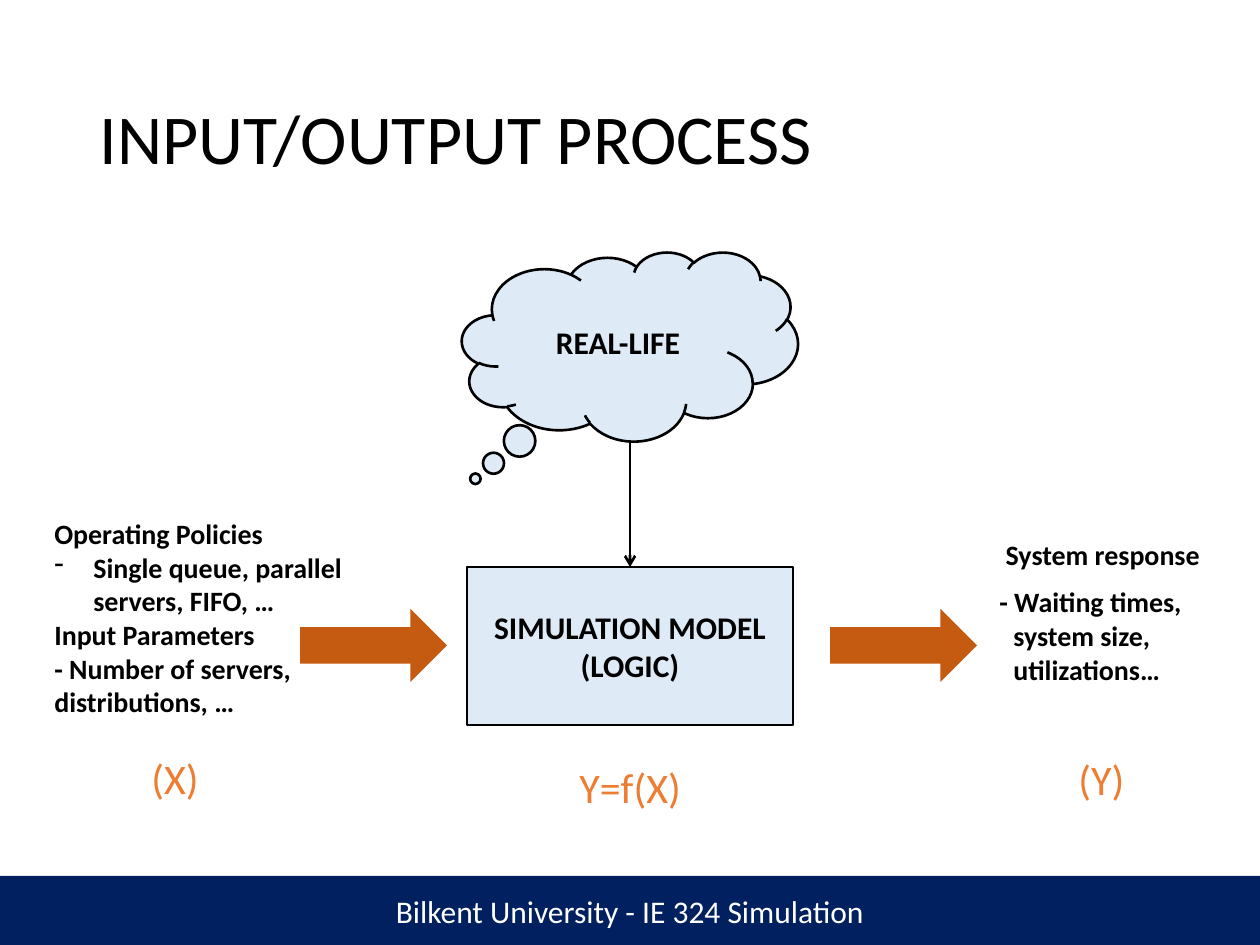
from lxml.etree import SubElement
from pptx import Presentation
from pptx.dml.color import RGBColor
from pptx.enum.shapes import MSO_CONNECTOR, MSO_SHAPE
from pptx.enum.text import MSO_ANCHOR, MSO_AUTO_SIZE, PP_ALIGN
from pptx.oxml.ns import qn
from pptx.util import Pt

SCALE = 914400 / 126
COLORS = {
    "navy": "002060",
    "pale": "DEEBF7",
    "rust": "C55A11",
    "orange": "ED7D31",
    "black": "000000",
    "white": "FFFFFF",
}


def emu(*sizes):
    return [round(size * SCALE) for size in sizes]


def color(name):
    return RGBColor.from_string(COLORS[name])


class Deck:
    """Holds the font, the line width and the current slide."""

    def __init__(self):
        self.font = "Calibri"
        self.line = Pt(1.5)
        self.prs = Presentation()
        self.prs.slide_width, self.prs.slide_height = emu(1260, 945)
        self.slide = self.prs.slides.add_slide(self.prs.slide_layouts[5])

    def letter(self, shape, text, size, ink="black", bold=False,
               align=PP_ALIGN.LEFT, wrap=True):
        frame = shape.text_frame
        frame.text = text
        frame.word_wrap = wrap
        frame.auto_size = MSO_AUTO_SIZE.NONE
        frame.vertical_anchor = MSO_ANCHOR.MIDDLE
        for para in frame.paragraphs:
            para.alignment = align
            for run in para.runs:
                run.font.name = self.font
                run.font.size = Pt(size)
                run.font.bold = bold
                run.font.color.rgb = color(ink)
        return frame.paragraphs

    def title(self, box, text):
        shape = self.slide.shapes.title
        shape.left, shape.top, shape.width, shape.height = emu(*box)
        self.letter(shape, text, 40)[0].line_spacing = 0.9

    def text(self, box, text, size, **style):
        shape = self.slide.shapes.add_textbox(*emu(*box))
        return self.letter(shape, text, size, **style)

    def shape(self, kind, box, fill, edge=None):
        shape = self.slide.shapes.add_shape(kind, *emu(*box))
        shape.shadow.inherit = False
        shape.fill.solid()
        shape.fill.fore_color.rgb = color(fill)
        if edge:
            shape.line.color.rgb = color(edge)
            shape.line.width = self.line
        else:
            shape.line.fill.background()
        return shape

    def label(self, kind, box, fill, text, ink="black", edge=None, bold=False):
        shape = self.shape(kind, box, fill, edge)
        self.letter(shape, text, 18, ink, bold, PP_ALIGN.CENTER, wrap=False)
        return shape

    def arrow(self, start, end):
        link = self.slide.shapes.add_connector(
            MSO_CONNECTOR.STRAIGHT, *emu(*start, *end))
        link.line.color.rgb = color("black")
        link.line.width = self.line
        props = link._element.spPr
        SubElement(props.find(qn("a:ln")), qn("a:tailEnd"), type="arrow")
        SubElement(props, qn("a:effectLst"))

    def indent(self, para, size, mark=None):
        props = para._p.get_or_add_pPr()
        left = emu(size)[0]
        props.set("marL", str(left))
        props.set("indent", str(-left))
        if mark:
            SubElement(props, qn("a:buChar"), char=mark)


def main():
    deck = Deck()
    deck.label(MSO_SHAPE.RECTANGLE, (0, 876, 1260, 69), "navy",
               "Bilkent University - IE 324 Simulation", "white")
    deck.title((87, 50, 1086, 183), "INPUT/OUTPUT PROCESS")

    deck.label(MSO_SHAPE.RECTANGLE, (467, 567, 326, 158), "pale",
               "SIMULATION MODEL\n(LOGIC)", edge="black", bold=True)
    cloud = deck.label(MSO_SHAPE.CLOUD_CALLOUT, (462, 252, 336, 189), "pale",
                       "REAL-LIFE", edge="black", bold=True)
    cloud.adjustments[0], cloud.adjustments[1] = -0.46, 0.7
    deck.arrow((630, 442), (630, 567))
    for left in (300, 830):
        deck.shape(MSO_SHAPE.RIGHT_ARROW, (left, 609, 147, 73), "rust")

    inputs = deck.text(
        (42, 509, 325, 217),
        "Operating Policies\n"
        "Single queue, parallel servers, FIFO, …\n"
        "Input Parameters\n"
        "- Number of servers, distributions, …", 16, bold=True)
    deck.indent(inputs[1], 39, "-")

    outputs = deck.text(
        (987, 529, 230, 165),
        " System response\n"
        "- Waiting times, system size, utilizations…", 16, bold=True)
    for para in outputs:
        deck.indent(para, 14)
    outputs[1].space_before = Pt(8)

    for text, box in (("(X)", (139, 746, 73, 63)),
                      ("(Y)", (1066, 747, 72, 63)),
                      ("Y=f(X)", (567, 755, 128, 63))):
        deck.text(box, text, 24, ink="orange", wrap=False)

    deck.prs.save("out.pptx")


if __name__ == "__main__":
    main()
